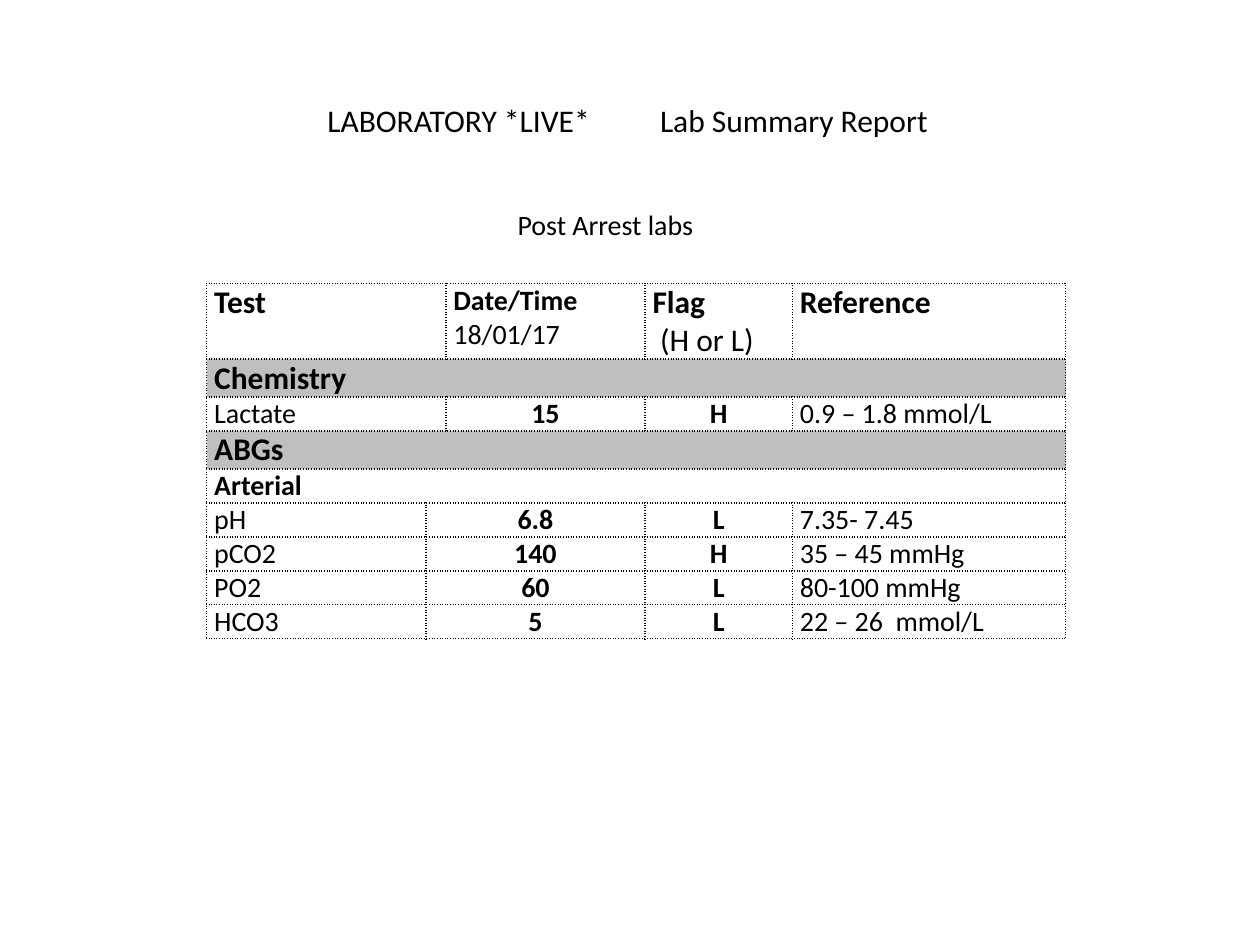
from lxml.etree import SubElement
from pptx import Presentation
from pptx.dml.color import RGBColor
from pptx.enum.text import MSO_ANCHOR, PP_ALIGN
from pptx.oxml.ns import qn
from pptx.util import Inches, Pt

BLACK = RGBColor(0, 0, 0)
WHITE = RGBColor(255, 255, 255)
GREY = RGBColor(191, 191, 191)

COLUMNS = [1.74, 0.09, 1.58, 1.17, 2.17]
HEADER_HEIGHT, SECTION_HEIGHT, RESULT_HEIGHT = 0.6, 0.3, 0.27

HEADERS = [
    (0, [("Test", 18, True)]),
    (2, [("Date/Time", 16, True), ("18/01/17", 16, False)]),
    (3, [("Flag", 18, True), ("(H or L)", 18, False)]),
    (4, [("Reference", 18, True)]),
]
ROWS = [
    ("Chemistry",),
    ("Lactate", "15", "H", "0.9 – 1.8 mmol/L"),
    ("ABGs",),
    ("Arterial",),
    ("pH", "6.8", "L", "7.35- 7.45"),
    ("pCO2", "140", "H", "35 – 45 mmHg"),
    ("PO2", "60", "L", "80-100 mmHg"),
    ("HCO3", "5", "L", "22 – 26  mmol/L"),
]
SECTIONS = ("Chemistry", "ABGs")


class LabSlide:
    font = "Calibri"

    def __init__(self, prs):
        self.s = prs.slides.add_slide(prs.slide_layouts[6])

    def add_text(self, p, text, size, bold=False, align=PP_ALIGN.LEFT):
        p.alignment = align
        r = p.add_run()
        r.text = text
        style = {"name": self.font, "size": Pt(size), "bold": bold}
        for key, value in style.items():
            setattr(r.font, key, value)
        r.font.color.rgb = BLACK

    def text_box(self, box, text, size, align=PP_ALIGN.LEFT, tab=None):
        tf = self.s.shapes.add_textbox(*map(Inches, box)).text_frame
        tf.word_wrap = True
        p = tf.paragraphs[0]
        if tab:
            tabs = SubElement(p._p.get_or_add_pPr(), qn("a:tabLst"))
            SubElement(tabs, qn("a:tab"), pos=str(Inches(tab)), algn="l")
        self.add_text(p, text, size, align=align)

    def table(self, left, top, widths, heights):
        frame = self.s.shapes.add_table(
            len(heights), len(widths), Inches(left), Inches(top),
            Inches(sum(widths)), Inches(sum(heights)))
        table = frame.table
        table.first_row = table.horz_banding = False
        for column, width in zip(table.columns, widths):
            column.width = Inches(width)
        for row, height in zip(table.rows, heights):
            row.height = Inches(height)
        for cell in table.iter_cells():
            self.format_cell(cell)
        return table

    def format_cell(self, cell):
        style = {"margin_left": Inches(0.06), "margin_right": Inches(0.06),
                 "margin_top": 0, "margin_bottom": 0,
                 "vertical_anchor": MSO_ANCHOR.TOP}
        for key, value in style.items():
            setattr(cell, key, value)
        tcPr = cell._tc.get_or_add_tcPr()
        for side in "LRTB":
            ln = SubElement(tcPr, qn(f"a:ln{side}"), w=str(Pt(1)))
            fill = SubElement(ln, qn("a:solidFill"))
            SubElement(fill, qn("a:srgbClr"), val=str(BLACK))
            SubElement(ln, qn("a:prstDash"), val="dot")
        cell.fill.background()

    def fill_row(self, table, i, color):
        for cell in table.rows[i].cells:
            cell.fill.solid()
            cell.fill.fore_color.rgb = color

    def header(self, table):
        table.cell(0, 0).merge(table.cell(0, 1))
        self.fill_row(table, 0, WHITE)
        for column, lines in HEADERS:
            tf = table.cell(0, column).text_frame
            for n, line in enumerate(lines):
                p = tf.add_paragraph() if n else tf.paragraphs[0]
                self.add_text(p, *line)
                if line[0] == "(H or L)":
                    p._p.get_or_add_pPr().set("marL", str(Inches(0.06)))

    def section(self, table, i, title):
        table.cell(i, 0).merge(table.cell(i, len(COLUMNS) - 1))
        shaded = title in SECTIONS
        if shaded:
            self.fill_row(table, i, GREY)
        p = table.cell(i, 0).text_frame.paragraphs[0]
        self.add_text(p, title, 18 if shaded else 16, True)

    def result(self, table, i, values):
        wide_name = values[0] == "Lactate"
        start = 0 if wide_name else 1
        table.cell(i, start).merge(table.cell(i, start + 1))
        columns = (0, 2 if wide_name else 1, 3, 4)
        for n, (column, value) in enumerate(zip(columns, values)):
            middle = n in (1, 2)
            p = table.cell(i, column).text_frame.paragraphs[0]
            align = PP_ALIGN.CENTER if middle else PP_ALIGN.LEFT
            self.add_text(p, value, 16, middle, align)


def main():
    prs = Presentation()
    prs.slide_width, prs.slide_height = Inches(10), Inches(7.5)
    slide = LabSlide(prs)
    slide.text_box((2.5, 0.75, 5.03, 0.4),
                   "LABORATORY *LIVE*\tLab Summary Report", 18, tab=2.64)
    heights = [HEADER_HEIGHT] + [
        SECTION_HEIGHT if row[0] in SECTIONS else RESULT_HEIGHT for row in ROWS]
    table = slide.table(1.64, 2.25, COLUMNS, heights)
    slide.header(table)
    for i, row in enumerate(ROWS, 1):
        if len(row) == 1:
            slide.section(table, i, row[0])
        else:
            slide.result(table, i, row)
    slide.text_box((4, 1.6, 1.61, 0.37), "Post Arrest labs", 16,
                   PP_ALIGN.CENTER)
    prs.save("out.pptx")


if __name__ == "__main__":
    main()
